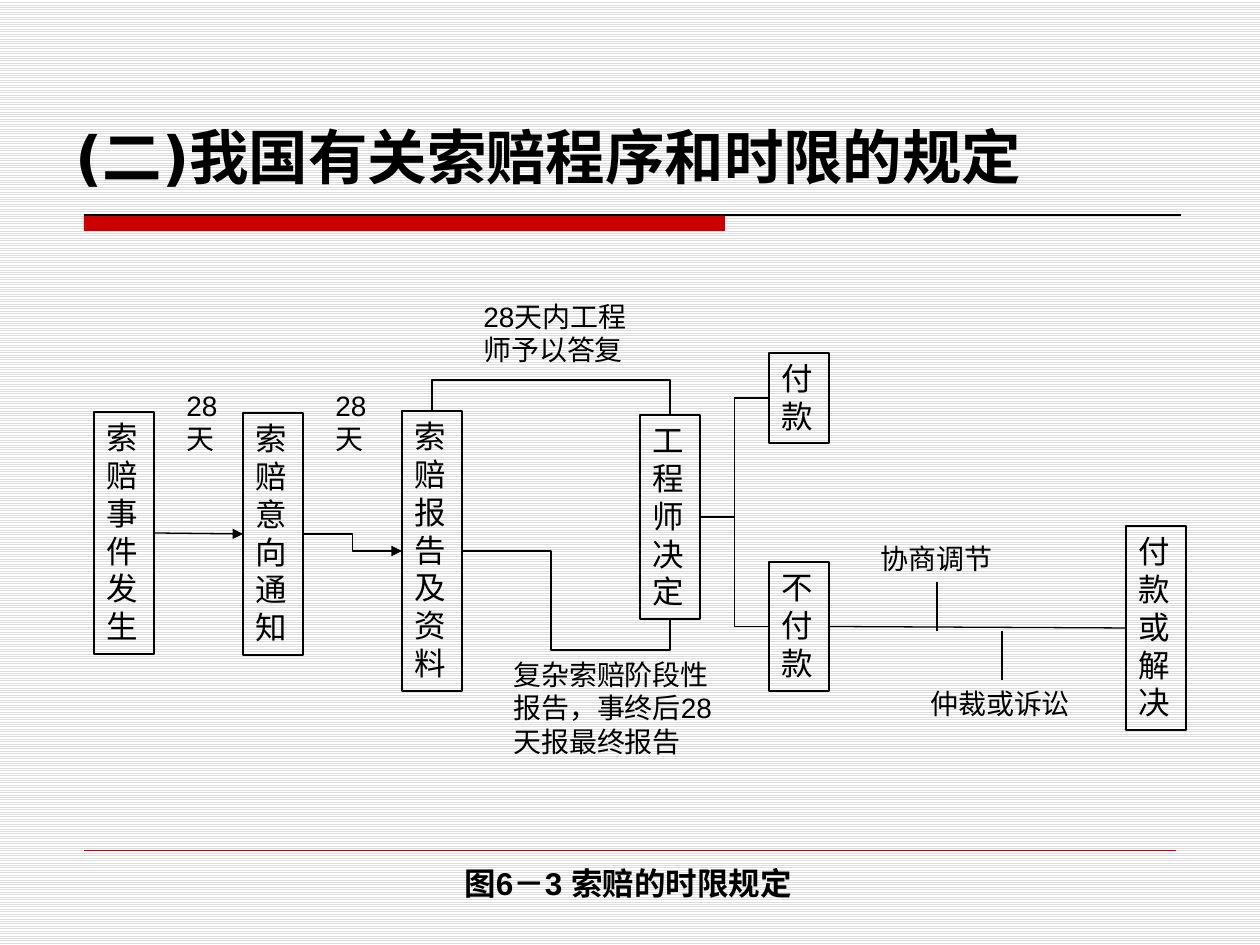
from dataclasses import dataclass

from lxml import etree
from pptx import Presentation
from pptx import util as u
from pptx.dml.color import RGBColor
from pptx.enum import dml, shapes, text
from pptx.oxml import ns

SCALE = 914400 / 126
TOP, LEFT, BOTTOM, RIGHT = range(4)


@dataclass(frozen=True)
class Theme:
    ink: RGBColor = RGBColor(0, 0, 0)
    red: RGBColor = RGBColor(0xCC, 0, 0)
    stripe: RGBColor = RGBColor(0xDD, 0xDD, 0xDD)
    paper: RGBColor = RGBColor(0xFF, 0xFF, 0xFF)
    head: str = "DejaVu Sans"
    body: str = "Arial"
    title: int = 34
    step: int = 18
    note: int = 16
    edge: float = 1
    link: float = 0.75
    hair: float = 0.25


THEME = Theme()


def px(n):
    return u.Emu(round(n * SCALE))


def box_of(*sides):
    return [px(n) for n in sides]


def write(frame, words, size, font=THEME.body, bold=False,
          align=text.PP_ALIGN.LEFT, anchor=text.MSO_ANCHOR.TOP):
    frame.word_wrap = True
    frame.auto_size = text.MSO_AUTO_SIZE.NONE
    frame.vertical_anchor = anchor
    frame.text = words
    par = frame.paragraphs[0]
    par.alignment = align
    par.font.size = u.Pt(size)
    par.font.name = font
    par.font.bold = bold
    par.font.color.rgb = THEME.ink


def note(slide, words, x, y, w, h, size=THEME.note, **style):
    label = slide.shapes.add_textbox(*box_of(x, y, w, h))
    write(label.text_frame, words, size, **style)


def step(slide, words, x, y, h):
    box = slide.shapes.add_shape(shapes.MSO_SHAPE.RECTANGLE, *box_of(x, y, 60, h))
    box.shadow.inherit = False
    box.fill.background()
    box.line.color.rgb = THEME.ink
    box.line.width = u.Pt(THEME.edge)
    write(box.text_frame, words, THEME.step)
    return box


def line(slide, x1, y1, x2, y2, color=THEME.ink, width=THEME.link,
         kind=shapes.MSO_CONNECTOR.STRAIGHT):
    wire = slide.shapes.add_connector(kind, *box_of(x1, y1, x2, y2))
    wire.line.color.rgb = color
    wire.line.width = u.Pt(width)
    etree.SubElement(wire._element.spPr, ns.qn("a:effectLst"))
    return wire


def join(slide, start, end, bent=True, arrow=False):
    kind = shapes.MSO_CONNECTOR.ELBOW if bent else shapes.MSO_CONNECTOR.STRAIGHT
    wire = line(slide, 0, 0, 0, 0, kind=kind)
    wire.begin_connect(start, RIGHT)
    wire.end_connect(end, LEFT)
    if arrow:
        tail = etree.SubElement(wire.line._get_or_add_ln(), ns.qn("a:tailEnd"))
        tail.set("type", "triangle")


def route(slide, first, *rest):
    pen = slide.shapes.build_freeform(*first, scale=SCALE)
    pen.add_line_segments(rest, close=False)
    track = pen.convert_to_shape()
    track.shadow.inherit = False
    track.fill.background()
    track.line.color.rgb = THEME.ink
    track.line.width = u.Pt(THEME.link)


def header(slide, x, y, w, h):
    title = slide.shapes.title
    title.left, title.top, title.width, title.height = box_of(x, y, w, h)
    write(title.text_frame, "(二)我国有关索赔程序和时限的规定", THEME.title,
          font=THEME.head, bold=True, anchor=text.MSO_ANCHOR.MIDDLE)
    left, base = x + 21, y + 138
    bar = slide.shapes.add_shape(shapes.MSO_SHAPE.RECTANGLE,
                                 *box_of(left, base, 641, 16))
    bar.shadow.inherit = False
    bar.fill.solid()
    bar.fill.fore_color.rgb = THEME.red
    bar.line.fill.background()
    line(slide, left, base, left + 1097, base)


def flow(slide, x, y):
    event = step(slide, "索赔事件发生", x, y + 119, 242)
    notice = step(slide, "索赔意向通知", x + 149, y + 120, 242)
    report = step(slide, "索赔报告及资料", x + 308, y + 118, 280)
    ruling = step(slide, "工程师决定", x + 546, y + 122, 204)
    pay = step(slide, "付款", x + 675, y + 60, 90)
    refuse = step(slide, "不付款", x + 675, y + 269, 129)
    settle = step(slide, "付款或解决", x + 1032, y + 233, 204)

    for left in (80, 229):
        note(slide, "28天", x + left, y + 89, 59, 81)
    note(slide, "28天内工程师予以答复", x + 377, y, 169, 81)
    note(slide, "复杂索赔阶段性报告，事终后28天报最终报告", x + 407, y + 358, 228, 113)
    note(slide, "协商调节", x + 774, y + 242, 139, 47)
    note(slide, "仲裁或诉讼", x + 824, y + 387, 169, 47)

    join(slide, event, notice, bent=False, arrow=True)
    join(slide, notice, report, arrow=True)
    join(slide, ruling, pay)
    join(slide, ruling, refuse)
    join(slide, refuse, settle, bent=False)
    for left, end in ((843, 289), (908, 387)):
        line(slide, x + left, y + 338, x + left, y + end)

    mid = x + 576
    route(slide, (x + 338, y + 118), (x + 338, y + 87), (mid, y + 87), (mid, y + 122))
    route(slide, (x + 368, y + 258), (x + 457, y + 258), (x + 457, y + 357),
          (mid, y + 357), (mid, y + 326))


def footer(slide, x, y, w):
    line(slide, x, y, x + w, y, color=THEME.red, width=THEME.hair)
    note(slide, "图6－3 索赔的时限规定", x + 367, y + 8, 354, 50, size=THEME.step,
         bold=True, align=text.PP_ALIGN.CENTER, anchor=text.MSO_ANCHOR.MIDDLE)


def main():
    deck = Presentation()
    deck.slide_width, deck.slide_height = px(1260), px(945)
    slide = deck.slides.add_slide(deck.slide_layouts[5])
    fill = slide.background.fill
    fill.patterned()
    fill.pattern = dml.MSO_PATTERN.LIGHT_HORIZONTAL
    fill.fore_color.rgb = THEME.stripe
    fill.back_color.rgb = THEME.paper
    header(slide, 63, 77, 1134, 158)
    flow(slide, 94, 293)
    footer(slide, 84, 850, 1092)
    deck.save("out.pptx")


if __name__ == "__main__":
    main()
